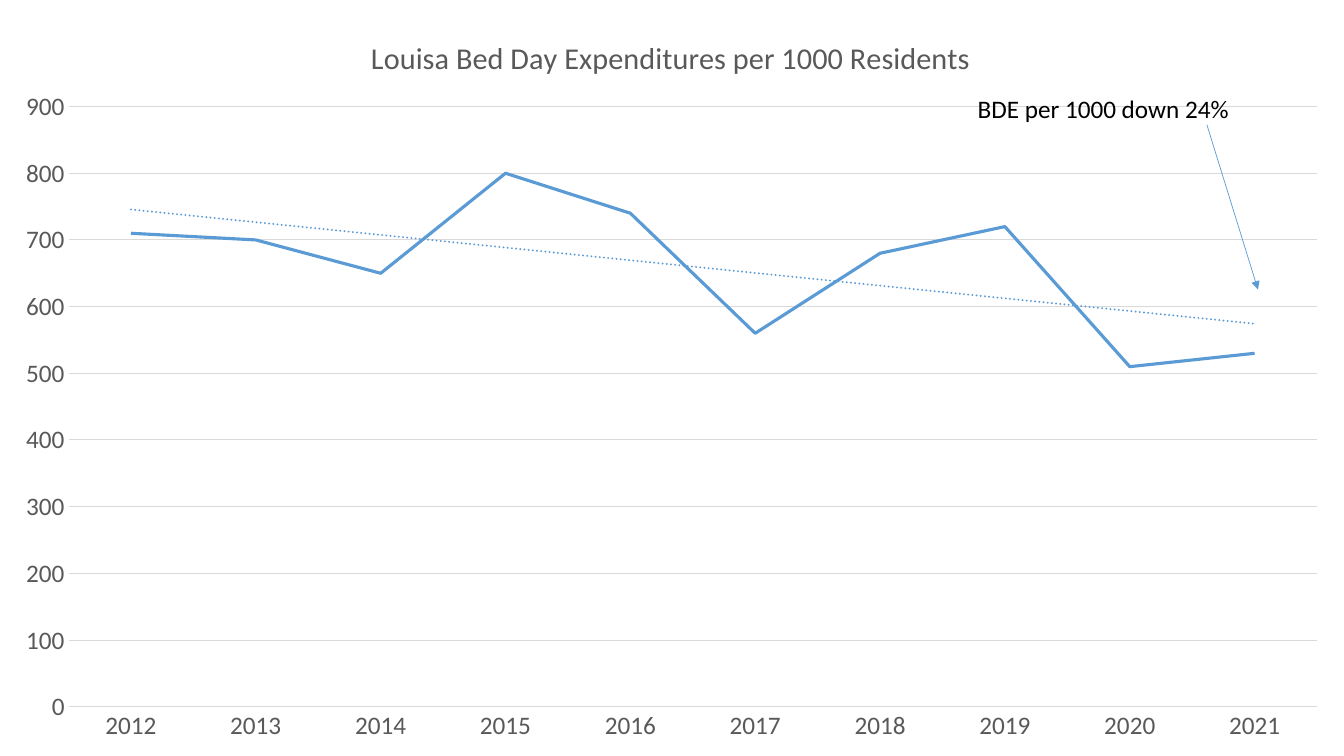
from dataclasses import dataclass

from lxml.etree import SubElement
from pptx import Presentation
from pptx.chart.chart import Chart
from pptx.chart.data import CategoryChartData
from pptx.dml.color import RGBColor
from pptx.dml.line import LineFormat
from pptx.enum.chart import XL_CHART_TYPE as ChartType, XL_TICK_MARK as TickMark
from pptx.enum.shapes import MSO_CONNECTOR as ConnectorType
from pptx.oxml import parse_xml
from pptx.oxml.ns import nsdecls, qn
from pptx.slide import Slide
from pptx.text.text import Font
from pptx.util import Inches, Pt

PAGE_WIDTH, PAGE_HEIGHT = Inches(13.33), Inches(7.5)
FONT = "Calibri"
BLUE, GRAY, PALE, BLACK = "5B9BD5", "595959", "D9D9D9", "000000"
TITLE = "Louisa Bed Day Expenditures per 1000 Residents"
FIRST_YEAR = 2012
EXPENDITURES = (710, 700, 650, 800, 740, 560, 680, 720, 510, 530)


@dataclass(frozen=True)
class Point:
    """A place given as shares of the slide's width and height."""
    x: float
    y: float

    @property
    def left(self) -> int:
        return round(self.x * PAGE_WIDTH)

    @property
    def top(self) -> int:
        return round(self.y * PAGE_HEIGHT)


NOTE_CORNER, NOTE_SIZE = Point(0.72, 0.117), Point(0.244, 0.053)
ARROW_START, ARROW_END = Point(0.898, 0.165), Point(0.936, 0.383)
PLOT_CORNER, PLOT_SIZE = Point(0.051, 0.141), Point(0.929, 0.794)
TITLE_CORNER = Point(0.272, 0.041)


def color(value: str) -> RGBColor:
    return RGBColor.from_string(value)


def style_font(font: Font, size: float, value: str) -> None:
    font.name, font.size, font.bold = FONT, Pt(size), False
    font.color.rgb = color(value)


def style_line(line: LineFormat, value: str, width: float) -> None:
    line.color.rgb = color(value)
    line.width = Pt(width)


def manual_layout(corner: Point, size: Point | None = None):
    """Return a chart layout measured from the chart's top left corner."""
    layout = parse_xml(f"<c:layout {nsdecls('c')}><c:manualLayout/></c:layout>")
    settings = {"xMode": "edge", "yMode": "edge", "x": corner.x, "y": corner.y}
    if size:
        settings = {"layoutTarget": "inner", **settings, "w": size.x, "h": size.y}
    for name, value in settings.items():
        SubElement(layout[0], qn(f"c:{name}")).set("val", str(value))
    return layout


def add_trend_line(chart: Chart) -> None:
    trend = parse_xml(
        f'<c:trendline {nsdecls("c", "a")}><c:spPr><a:ln w="{Pt(1.5)}" cap="rnd">'
        f'<a:solidFill><a:srgbClr val="{BLUE}"/></a:solidFill>'
        '<a:prstDash val="sysDot"/></a:ln></c:spPr>'
        '<c:trendlineType val="linear"/><c:dispRSqr val="0"/>'
        '<c:dispEq val="0"/></c:trendline>'
    )
    chart.series[0]._element.find(qn("c:cat")).addprevious(trend)


def place_chart_parts(chart: Chart) -> None:
    plot_area = chart._chartSpace.chart.plotArea
    title = chart.chart_title._element
    for parent in (plot_area, title):
        for layout in parent.findall(qn("c:layout")):
            parent.remove(layout)
    plot_area.insert(0, manual_layout(PLOT_CORNER, PLOT_SIZE))
    title.find(qn("c:tx")).addnext(manual_layout(TITLE_CORNER))


def style_axes(chart: Chart) -> None:
    for axis in (chart.category_axis, chart.value_axis):
        axis.major_tick_mark = axis.minor_tick_mark = TickMark.NONE
        style_font(axis.tick_labels.font, 18, GRAY)
    style_line(chart.category_axis.format.line, PALE, 0.75)
    values = chart.value_axis
    values.minimum_scale, values.maximum_scale, values.major_unit = 0, 900, 100
    values.format.line.fill.background()
    style_line(values.major_gridlines.format.line, PALE, 0.75)


def add_expenditure_chart(page: Slide) -> None:
    data = CategoryChartData()
    data.categories = [str(FIRST_YEAR + i) for i in range(len(EXPENDITURES))]
    data.add_series("Series 1", EXPENDITURES)
    chart = page.shapes.add_chart(
        ChartType.LINE, 0, 0, PAGE_WIDTH, PAGE_HEIGHT, data
    ).chart
    style_font(chart.font, 18, BLACK)
    chart.has_legend = False
    chart.plots[0].vary_by_categories = False
    chart.series[0].smooth = False
    style_line(chart.series[0].format.line, BLUE, 2.25)
    para = chart.chart_title.text_frame.paragraphs[0]
    para.text = TITLE
    style_font(para.font, 21.6, GRAY)
    chart.chart_title.include_in_layout = False
    style_axes(chart)
    add_trend_line(chart)
    place_chart_parts(chart)


def add_note(page: Slide) -> None:
    box = page.shapes.add_textbox(
        NOTE_CORNER.left, NOTE_CORNER.top, NOTE_SIZE.left, NOTE_SIZE.top
    )
    box.text_frame.word_wrap = True
    para = box.text_frame.paragraphs[0]
    para.text = "BDE per 1000 down 24%"
    style_font(para.font, 18, BLACK)


def add_arrow(page: Slide) -> None:
    arrow = page.shapes.add_connector(
        ConnectorType.STRAIGHT,
        ARROW_START.left, ARROW_START.top, ARROW_END.left, ARROW_END.top,
    )
    style_line(arrow.line, BLUE, 0.5)
    SubElement(arrow.line._get_or_add_ln(), qn("a:tailEnd")).set("type", "triangle")
    SubElement(arrow._element.spPr, qn("a:effectLst"))


def main() -> None:
    deck = Presentation()
    deck.slide_width, deck.slide_height = PAGE_WIDTH, PAGE_HEIGHT
    page = deck.slides.add_slide(deck.slide_layouts[6])
    add_expenditure_chart(page)
    add_note(page)
    add_arrow(page)
    deck.save("out.pptx")


if __name__ == "__main__":
    main()
